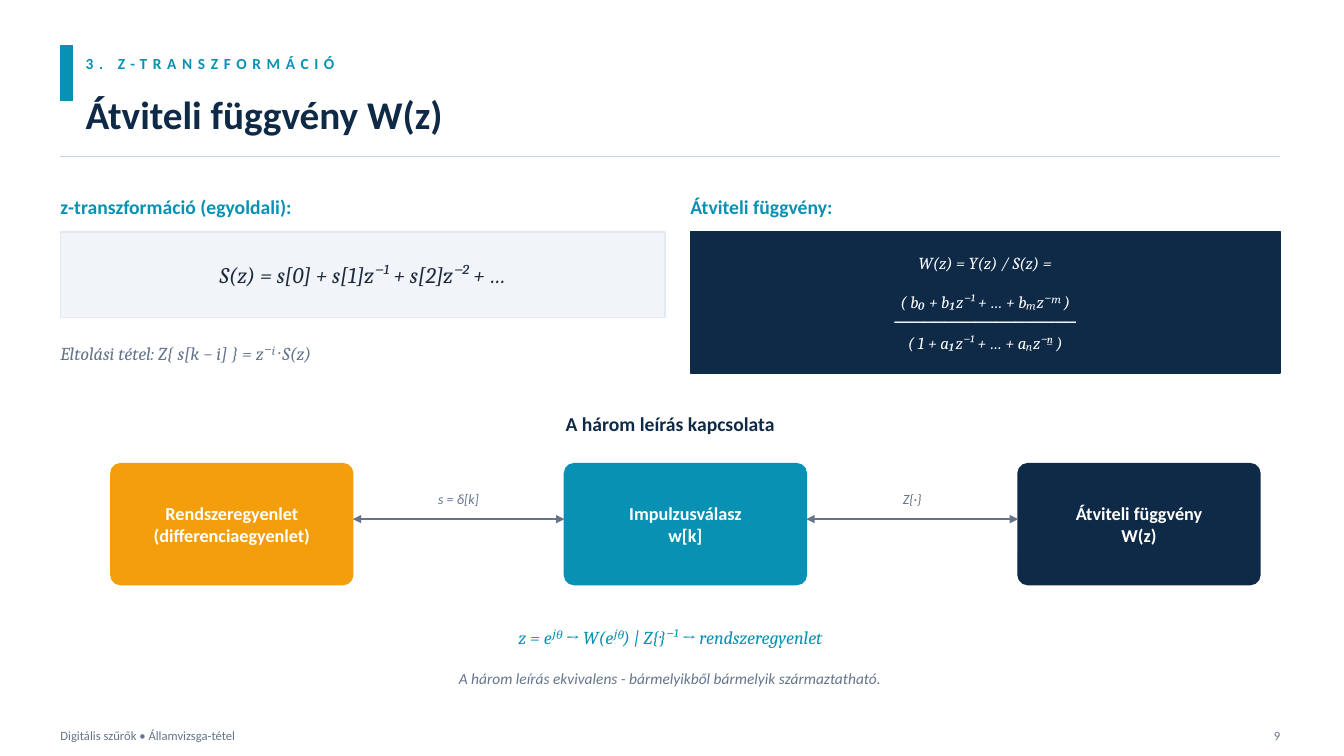
from dataclasses import dataclass

import pptx
import pptx.dml.color
import pptx.enum.shapes
import pptx.enum.text
import pptx.oxml
import pptx.oxml.ns
import pptx.util

Pt = pptx.util.Pt
RGB = pptx.dml.color.RGBColor
ALIGN = pptx.enum.text.PP_ALIGN
SHAPE = pptx.enum.shapes.MSO_SHAPE


@dataclass(frozen=True)
class Theme:
    teal: str = "0891B2"
    navy: str = "0F2A47"
    amber: str = "F59E0B"
    slate: str = "64748B"
    ink: str = "1E293B"
    rule: str = "CBD5E1"
    panel: str = "F1F5F9"
    panel_edge: str = "E2E8F0"
    white: str = "FFFFFF"
    sans: str = "Calibri"
    serif: str = "Cambria"
    title: int = 28
    formula: int = 16
    heading: int = 14
    body: int = 13
    fraction: int = 12
    note: int = 11
    label: int = 10
    footer: int = 9


THEME = Theme()


@dataclass(frozen=True)
class Area:
    left: float
    top: float
    width: float
    height: float

    def lengths(self) -> list:
        return [Pt(v) for v in (self.left, self.top, self.width, self.height)]


@dataclass(frozen=True)
class Description:
    lines: tuple
    color: str


def write(frame, *lines: str, size: int, color: str, font: str = THEME.sans,
          bold: bool = False, italic: bool = False, align=ALIGN.LEFT,
          spacing: float = 0, first_gap: float = 0) -> None:
    """Fill a text frame, one paragraph per line."""
    frame.word_wrap = True
    frame.vertical_anchor = pptx.enum.text.MSO_ANCHOR.MIDDLE
    frame.margin_left = frame.margin_right = frame.margin_top = frame.margin_bottom = 0
    for index, line in enumerate(lines):
        paragraph = frame.paragraphs[0] if index == 0 else frame.add_paragraph()
        paragraph.alignment = align
        if index == 0 and first_gap:
            paragraph.space_after = Pt(first_gap)
        run = paragraph.add_run()
        run.text = line
        run.font.name, run.font.size = font, Pt(size)
        run.font.bold, run.font.italic = bold, italic
        run.font.color.rgb = RGB.from_string(color)
        if spacing:
            run.font._element.set("spc", str(round(spacing * 100)))


def add_text(slide, area: Area, *lines: str, **style) -> None:
    write(slide.shapes.add_textbox(*area.lengths()).text_frame, *lines, **style)


def add_block(slide, area: Area, fill: str, edge: str = "", kind=SHAPE.RECTANGLE):
    block = slide.shapes.add_shape(kind, *area.lengths())
    block.shadow.inherit = False
    block.fill.solid()
    block.fill.fore_color.rgb = RGB.from_string(fill)
    block.line.color.rgb = RGB.from_string(edge or fill)
    block.line.width = Pt(1)
    return block


def add_line(slide, left: float, right: float, y: float, color: str,
             weight: float, arrows: bool = False) -> None:
    line = slide.shapes.add_connector(pptx.enum.shapes.MSO_CONNECTOR.STRAIGHT,
                                      Pt(left), Pt(y), Pt(right), Pt(y))
    line.line.color.rgb = RGB.from_string(color)
    line.line.width = Pt(weight)
    properties = line._element.spPr
    if arrows:
        for end in ("a:headEnd", "a:tailEnd"):
            tip = pptx.oxml.parse_xml(f"<{end} {pptx.oxml.ns.nsdecls('a')} type='triangle'/>")
            line.line._get_or_add_ln().append(tip)
    properties.append(pptx.oxml.parse_xml(f"<a:effectLst {pptx.oxml.ns.nsdecls('a')}/>"))


# Page grid
MARGIN, CONTENT_WIDTH = 43.2, 871.2
RIGHT_COLUMN, COLUMN_WIDTH = 493.2, 432

# Row of linked descriptions
FIRST_LEFT, ROW_TOP, BOX_WIDTH, BOX_HEIGHT, LINK_WIDTH = 79.2, 331.2, 172.8, 86.4, 151.2
LINK_Y, LINK_LABEL_TOP = 370.8, 345.6
DESCRIPTIONS = (
    Description(("Rendszeregyenlet", "(differenciaegyenlet)"), THEME.amber),
    Description(("Impulzusválasz", "w[k]"), THEME.teal),
    Description(("Átviteli függvény", "W(z)"), THEME.navy),
)
LINK_LABELS = ("s = δ[k]", "Z{·}")


def draw_header(slide) -> None:
    add_block(slide, Area(MARGIN, 32.4, 8.64, 39.6), THEME.teal)
    add_text(slide, Area(61.2, 32.4, 576, 25.2), "3. Z-TRANSZFORMÁCIÓ",
             size=THEME.note, color=THEME.teal, bold=True, spacing=4)
    add_text(slide, Area(61.2, 56.16, 864, 50.4), "Átviteli függvény W(z)",
             size=THEME.title, color=THEME.navy, bold=True)
    add_line(slide, MARGIN, MARGIN + CONTENT_WIDTH, 111.6, THEME.rule, 0.75)


def draw_formulas(slide) -> None:
    for left, heading in ((MARGIN, "z-transzformáció (egyoldali):"),
                          (RIGHT_COLUMN, "Átviteli függvény:")):
        add_text(slide, Area(left, 133.2, COLUMN_WIDTH, 28.8), heading,
                 size=THEME.heading, color=THEME.teal, bold=True)

    # z-transform and shift theorem
    transform = add_block(slide, Area(MARGIN, 165.6, COLUMN_WIDTH, 61.2),
                          THEME.panel, THEME.panel_edge)
    write(transform.text_frame, "S(z) = s[0] + s[1]·z⁻¹ + s[2]·z⁻² + …",
          size=THEME.formula, color=THEME.ink, font=THEME.serif, italic=True,
          align=ALIGN.CENTER)
    add_text(slide, Area(MARGIN, 237.6, COLUMN_WIDTH, 28.8),
             "Eltolási tétel: Z{ s[k − i] } = z⁻ⁱ · S(z)",
             size=THEME.body, color=THEME.slate, font=THEME.serif, italic=True)

    # Transfer function as a fraction
    transfer = add_block(slide, Area(RIGHT_COLUMN, 165.6, 421.2, 100.8), THEME.navy)
    write(transfer.text_frame, "W(z) = Y(z) / S(z) =", "( b₀ + b₁z⁻¹ + … + bₘz⁻ᵐ )",
          "─" * 18, "( 1 + a₁z⁻¹ + … + aₙz⁻ⁿ )",
          size=THEME.fraction, color=THEME.white, font=THEME.serif, italic=True,
          align=ALIGN.CENTER, first_gap=14)


def draw_relations(slide) -> None:
    add_text(slide, Area(MARGIN, 288, CONTENT_WIDTH, 28.8), "A három leírás kapcsolata",
             size=THEME.heading, color=THEME.navy, bold=True, align=ALIGN.CENTER)
    step = BOX_WIDTH + LINK_WIDTH
    for index, description in enumerate(DESCRIPTIONS):
        box = add_block(slide, Area(FIRST_LEFT + index * step, ROW_TOP, BOX_WIDTH, BOX_HEIGHT),
                        description.color, kind=SHAPE.ROUNDED_RECTANGLE)
        box.adjustments[0] = 0.08
        write(box.text_frame, *description.lines, size=THEME.body, color=THEME.white,
              bold=True, align=ALIGN.CENTER)
    for index, label in enumerate(LINK_LABELS):
        left = FIRST_LEFT + BOX_WIDTH + index * step
        add_line(slide, left, left + LINK_WIDTH, LINK_Y, THEME.slate, 1.5, arrows=True)
        add_text(slide, Area(left, LINK_LABEL_TOP, LINK_WIDTH, 21.6), label,
                 size=THEME.label, color=THEME.slate, italic=True, align=ALIGN.CENTER)

    # Conclusions
    add_text(slide, Area(MARGIN, 439.2, CONTENT_WIDTH, 32.4),
             "z = eʲᶿ → W(eʲᶿ) | Z{·}⁻¹ → rendszeregyenlet",
             size=THEME.body, color=THEME.teal, font=THEME.serif, italic=True,
             align=ALIGN.CENTER)
    add_text(slide, Area(MARGIN, 471.6, CONTENT_WIDTH, 25.2),
             "A három leírás ekvivalens - bármelyikből bármelyik származtatható.",
             size=THEME.note, color=THEME.slate, italic=True, align=ALIGN.CENTER)


def draw_footer(slide) -> None:
    add_text(slide, Area(MARGIN, 514.8, 576, 21.6), "Digitális szűrők • Államvizsga-tétel",
             size=THEME.footer, color=THEME.slate)
    add_text(slide, Area(892.8, 514.8, 21.6, 21.6), "9",
             size=THEME.footer, color=THEME.slate, align=ALIGN.RIGHT)


def main() -> None:
    deck = pptx.Presentation()
    deck.slide_width, deck.slide_height = Pt(960), Pt(540)
    slide = deck.slides.add_slide(deck.slide_layouts[6])
    draw_header(slide)
    draw_formulas(slide)
    draw_relations(slide)
    draw_footer(slide)
    deck.save("out.pptx")


if __name__ == "__main__":
    main()
